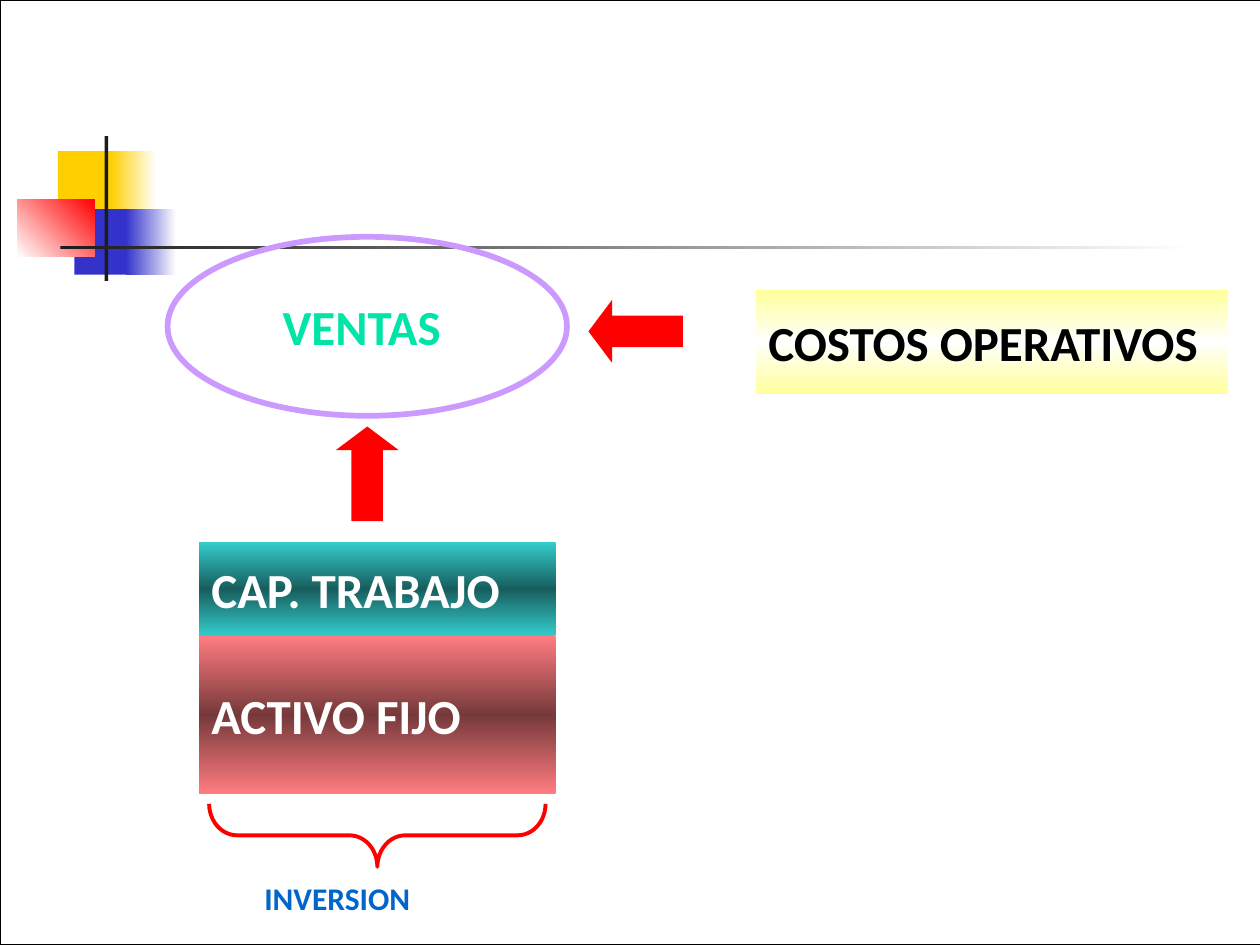
from lxml import etree
from pptx import Presentation
from pptx.dml.color import RGBColor
from pptx.enum.shapes import MSO_SHAPE
from pptx.enum.text import MSO_ANCHOR, PP_ALIGN
from pptx.oxml.ns import qn
from pptx.util import Inches, Pt

FONT = "Calibri"
WHITE = RGBColor(0xFF, 0xFF, 0xFF)
BLACK = RGBColor(0x00, 0x00, 0x00)
YELLOW = RGBColor(0xFF, 0xCF, 0x01)
BLUE = RGBColor(0x33, 0x33, 0xCC)
RED = RGBColor(0xFF, 0x00, 0x00)
CHARCOAL = RGBColor(0x1C, 0x1C, 0x1C)
PINK = RGBColor(0xFF, 0x7C, 0x80)
DARK_PINK = RGBColor(0x76, 0x39, 0x3B)
TEAL = RGBColor(0x33, 0xCC, 0xCC)
DARK_TEAL = RGBColor(0x18, 0x5E, 0x5E)
PALE_YELLOW = RGBColor(0xFF, 0xFF, 0x99)
GREEN = RGBColor(0x00, 0xE4, 0xA8)
LILAC = RGBColor(0xCC, 0x99, 0xFF)
LINK_BLUE = RGBColor(0x00, 0x66, 0xCC)


def fill_gradient(shape, colors, angle):
    """Spread the colours evenly; the angle runs counter-clockwise."""
    shape.fill.gradient()
    shape.fill.gradient_angle = angle
    stops = shape._element.spPr.find(qn("a:gradFill")).find(qn("a:gsLst"))
    for stop in list(stops):
        stops.remove(stop)
    for i, color in enumerate(colors):
        stop = etree.SubElement(stops, qn("a:gs"), pos=str(100000 * i // (len(colors) - 1)))
        etree.SubElement(stop, qn("a:srgbClr"), val=str(color))


def add_figure(slide, kind, left, top, width, height, colors=(), angle=0,
               line=None, weight=0.75, rotation=0):
    """Add a preset shape with no fill, a plain fill or a gradient."""
    figure = slide.shapes.add_shape(
        kind, Inches(left), Inches(top), Inches(width), Inches(height))
    figure.shadow.inherit = False
    figure.rotation = rotation
    if len(colors) > 1:
        fill_gradient(figure, colors, angle)
    elif colors:
        figure.fill.solid()
        figure.fill.fore_color.rgb = colors[0]
    else:
        figure.fill.background()
    if line is None:
        figure.line.fill.background()
    else:
        figure.line.color.rgb = line
        figure.line.width = Pt(weight)
    return figure


def write(shape, wording, color, size=28, align=PP_ALIGN.LEFT, anchor=MSO_ANCHOR.MIDDLE):
    frame = shape.text_frame
    frame.word_wrap = True
    frame.vertical_anchor = anchor
    paragraph = frame.paragraphs[0]
    paragraph.alignment = align
    run = paragraph.add_run()
    run.text = wording
    run.font.name = FONT
    run.font.size = Pt(size)
    run.font.bold = True
    run.font.color.rgb = color


def add_label(slide, left, top, width, height, wording, color, **style):
    label = slide.shapes.add_textbox(
        Inches(left), Inches(top), Inches(width), Inches(height))
    write(label, wording, color, anchor=MSO_ANCHOR.TOP, **style)


def add_band(slide, left, top, width, height, wording, edge, middle, color=WHITE):
    band = add_figure(slide, MSO_SHAPE.RECTANGLE, left, top, width, height,
                      (edge, middle, edge), angle=270)
    write(band, wording, color)


def add_arrow(slide, left, top, rotation):
    arrow = add_figure(slide, MSO_SHAPE.RIGHT_ARROW, left, top, 0.75, 0.5,
                       (RED,), rotation=rotation)
    arrow.adjustments[0] = 0.5
    arrow.adjustments[1] = 0.375


def add_ornament(slide, left, top):
    """Coloured squares crossed by a short upright and a long fading rule."""
    for dx, dy, width, height, colors, angle in (
        (0.32, 0.12, 0.48, 0.52, (YELLOW,), 0),
        (0.74, 0.12, 0.36, 0.52, (YELLOW, WHITE), 0),
        (0.45, 0.58, 0.46, 0.52, (BLUE,), 0),
        (0.86, 0.58, 0.40, 0.52, (BLUE, WHITE), 0),
        (0, 0.5, 0.61, 0.46, (WHITE, RED), 45),
        (0.69, 0, 0.03, 1.15, (CHARCOAL,), 0),
        (0.34, 0.87, 9, 0.03, (CHARCOAL, WHITE), 0),
    ):
        add_figure(slide, MSO_SHAPE.RECTANGLE, left + dx, top + dy,
                   width, height, colors, angle)


def add_sales(slide, left, top, width, height):
    add_label(slide, left + 0.59, top + 0.42, 1.9, 0.51, "VENTAS", GREEN,
              align=PP_ALIGN.CENTER)
    add_figure(slide, MSO_SHAPE.OVAL, left, top, width, height, line=LILAC, weight=3.25)


def add_investment(slide, left, top, width):
    """Working capital over fixed assets, gathered by a brace."""
    capital_height, assets_height = 0.75, 1.25
    assets_top = top + capital_height
    bottom = assets_top + assets_height
    add_band(slide, left, assets_top, width, assets_height, "ACTIVO FIJO", PINK, DARK_PINK)
    add_band(slide, left, top, width, capital_height, "CAP. TRABAJO", TEAL, DARK_TEAL)
    depth, span = 0.5, 2.67
    brace = add_figure(slide, MSO_SHAPE.RIGHT_BRACE, left + (width - depth) / 2,
                       bottom + 0.08 + (depth - span) / 2, depth, span,
                       line=RED, weight=2.25, rotation=90)
    brace.adjustments[0] = 0.444
    brace.adjustments[1] = 0.5
    add_label(slide, left + 0.42, bottom + 0.63, 2.17, 0.4, "INVERSION", LINK_BLUE, size=18)


def main():
    deck = Presentation()
    deck.slide_width, deck.slide_height = Inches(10), Inches(7.5)
    slide = deck.slides.add_slide(deck.slide_layouts[6])
    add_ornament(slide, 0.14, 1.08)
    add_figure(slide, MSO_SHAPE.RECTANGLE, 0, 0, 10.25, 7.5, line=BLACK)
    add_investment(slide, 1.58, 4.3, 2.83)
    add_band(slide, 6, 2.3, 3.75, 0.83, "COSTOS OPERATIVOS", PALE_YELLOW, WHITE, BLACK)
    add_arrow(slide, 2.54, 3.51, 270)
    add_arrow(slide, 4.67, 2.38, 180)
    add_sales(slide, 1.33, 1.88, 3.17, 1.42)
    deck.save("out.pptx")


if __name__ == "__main__":
    main()
